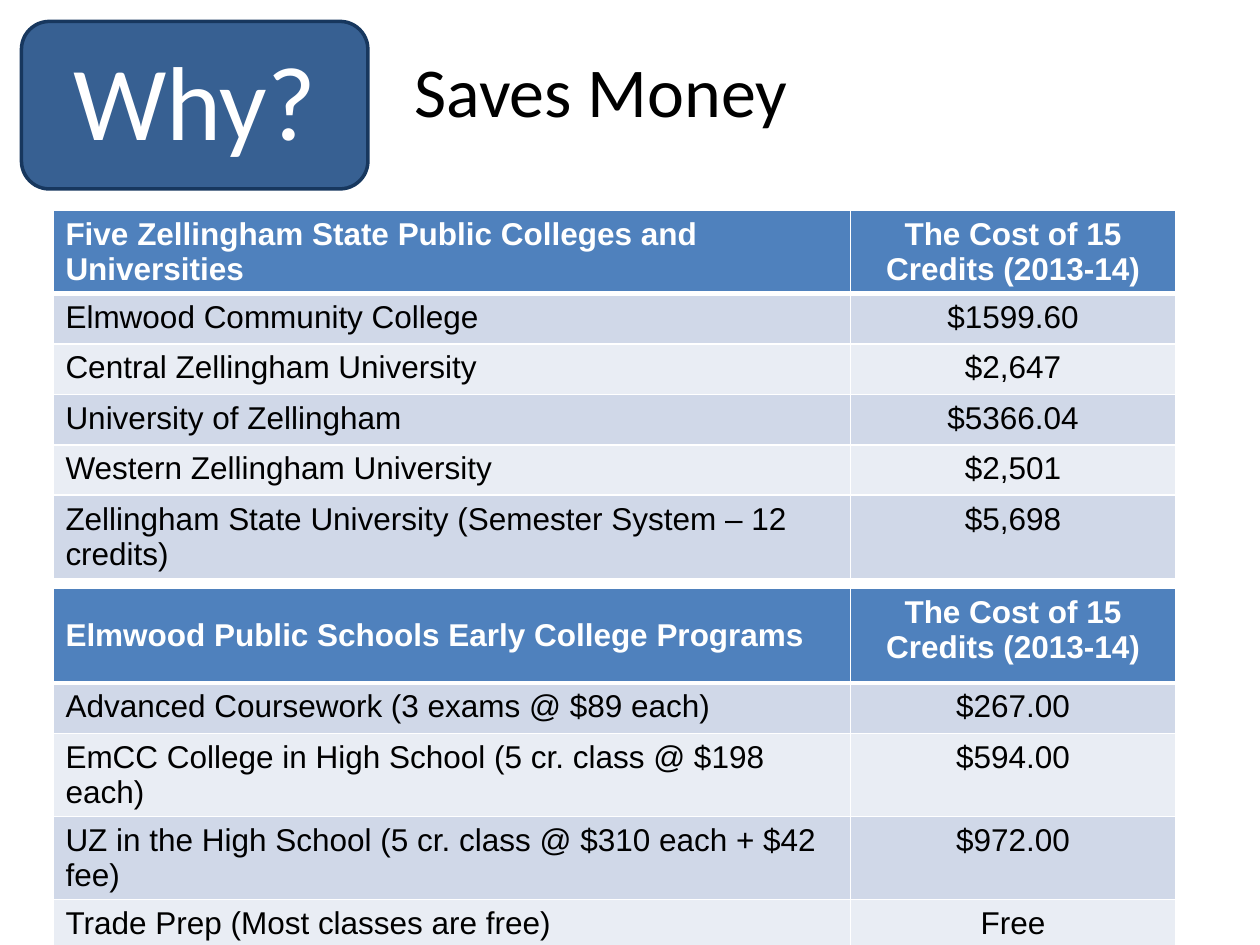
from dataclasses import dataclass

from lxml import etree
from pptx import Presentation
from pptx import util as u
from pptx.dml.color import RGBColor
from pptx.enum import shapes, text
from pptx.oxml import ns

WHITE = RGBColor(0xFF, 0xFF, 0xFF)
BLACK = RGBColor(0x00, 0x00, 0x00)
BADGE_BLUE = RGBColor(0x37, 0x60, 0x92)
BADGE_EDGE = RGBColor(0x17, 0x37, 0x5E)
HEADER_BLUE = RGBColor(0x4F, 0x81, 0xBD)
BANDS = (RGBColor(0xD0, 0xD8, 0xE8), RGBColor(0xE9, 0xED, 0xF4))

TABLE_LEFT = 0.42
COLUMN_WIDTHS = (6.33, 2.58)
ROW_HEIGHT = 0.4
COST_HEADING = "The Cost of 15 Credits (2013-14)"


@dataclass
class CostTable:
    top: float
    header_height: float
    heading: str
    costs: list[tuple[str, str]]


COST_TABLES = [
    CostTable(1.67, ROW_HEIGHT, "Five Zellingham State Public Colleges and Universities", [
        ("Elmwood Community College", "$1599.60"),
        ("Central Zellingham University", "$2,647"),
        ("University of Zellingham", "$5366.04"),
        ("Western Zellingham University", "$2,501"),
        ("Zellingham State University (Semester System – 12 credits)", "$5,698"),
    ]),
    CostTable(4.67, 0.75, "Elmwood Public Schools Early College Programs", [
        ("Advanced Coursework (3 exams @ $89 each)", "$267.00"),
        ("EmCC College in High School (5 cr. class @ $198 each)", "$594.00"),
        ("UZ in the High School (5 cr. class @ $310 each + $42 fee)", "$972.00"),
        ("Trade Prep (Most classes are free)", "Free"),
    ]),
]


def write_text(frame, content: str, align, color: RGBColor, **formats) -> None:
    """Put one formatted paragraph into a text frame."""
    paragraph = frame.paragraphs[0]
    paragraph.alignment = align
    run = paragraph.add_run()
    run.text = content
    for name, value in formats.items():
        setattr(run.font, name, value)
    run.font.color.rgb = color


def set_borders(cell, widths: dict[str, int]) -> None:
    """Draw white cell borders; widths are points by side, in schema order."""
    properties = cell._tc.get_or_add_tcPr()
    for index, (side, width) in enumerate(widths.items()):
        line = etree.Element(ns.qn(f"a:ln{side}"), w=str(u.Pt(width)))
        fill = etree.SubElement(line, ns.qn("a:solidFill"))
        etree.SubElement(fill, ns.qn("a:srgbClr"), val=str(WHITE))
        properties.insert(index, line)


def draw_table(slide, cost_table: CostTable) -> None:
    rows = [(cost_table.heading, COST_HEADING), *cost_table.costs]
    heights = [cost_table.header_height] + [ROW_HEIGHT] * len(cost_table.costs)
    table = slide.shapes.add_table(
        len(rows), len(COLUMN_WIDTHS), u.Inches(TABLE_LEFT), u.Inches(cost_table.top),
        u.Inches(sum(COLUMN_WIDTHS)), u.Inches(sum(heights))).table
    for column, width in zip(table.columns, COLUMN_WIDTHS):
        column.width = u.Inches(width)

    for row_index, values in enumerate(rows):
        table.rows[row_index].height = u.Inches(heights[row_index])
        is_header = row_index == 0
        for column_index, value in enumerate(values):
            cell = table.cell(row_index, column_index)
            cell.fill.solid()
            cell.fill.fore_color.rgb = HEADER_BLUE if is_header else BANDS[(row_index - 1) % 2]
            align = text.PP_ALIGN.CENTER if column_index else text.PP_ALIGN.LEFT
            write_text(cell.text_frame, value, align, WHITE if is_header else BLACK,
                       name="Arial", size=u.Pt(18), bold=is_header)
            set_borders(cell, {"L": 1, "R": 1, "T": 3 if row_index == 1 else 1,
                               "B": 3 if is_header else 1})
    table.cell(0, 0).vertical_anchor = text.MSO_ANCHOR.MIDDLE


def draw_badge(slide) -> None:
    badge = slide.shapes.add_shape(
        shapes.MSO_SHAPE.ROUNDED_RECTANGLE,
        u.Inches(0.17), u.Inches(0.17), u.Inches(2.75), u.Inches(1.33))
    badge.shadow.inherit = False
    badge.fill.solid()
    badge.fill.fore_color.rgb = BADGE_BLUE
    badge.line.color.rgb = BADGE_EDGE
    badge.line.width = u.Pt(2)
    badge.text_frame.vertical_anchor = text.MSO_ANCHOR.MIDDLE
    badge.text_frame.margin_bottom = u.Inches(0.15)
    write_text(badge.text_frame, "Why?", text.PP_ALIGN.CENTER, WHITE,
               name="Calibri", size=u.Pt(60))


def draw_title(slide) -> None:
    title = slide.shapes.title
    position = {"left": 3.19, "top": 0.33, "width": 3.67, "height": 1}
    for name, value in position.items():
        setattr(title, name, u.Inches(value))
    frame = title.text_frame
    frame.auto_size = text.MSO_AUTO_SIZE.NONE
    frame.vertical_anchor = text.MSO_ANCHOR.TOP
    frame.paragraphs[0].space_before = u.Pt(2)
    write_text(frame, "Saves Money", text.PP_ALIGN.LEFT, BLACK,
               name="Calibri", size=u.Pt(40))


def main() -> None:
    presentation = Presentation()
    presentation.slide_width = u.Inches(10)
    presentation.slide_height = u.Inches(7.5)
    slide = presentation.slides.add_slide(presentation.slide_layouts.get_by_name("Title Only"))

    # Heading
    draw_badge(slide)
    draw_title(slide)

    # Cost comparison
    for cost_table in COST_TABLES:
        draw_table(slide, cost_table)

    presentation.save("out.pptx")


if __name__ == "__main__":
    main()
